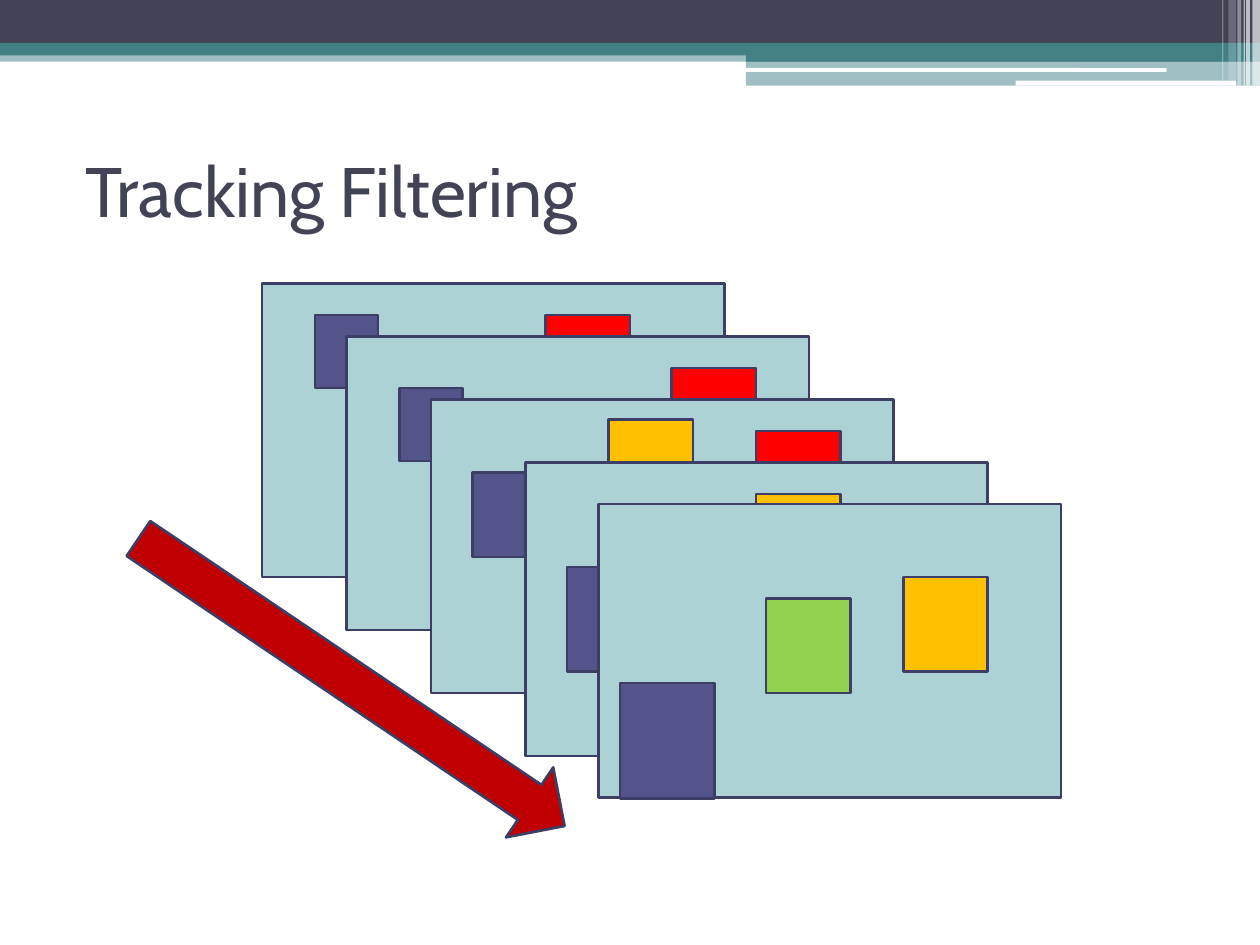
import pptx
import pptx.dml.color
import pptx.enum.shapes
import pptx.enum.text
import pptx.oxml.ns
import pptx.util
from lxml import etree

Inches = pptx.util.Inches
RGBColor = pptx.dml.color.RGBColor
SHAPE = pptx.enum.shapes.MSO_SHAPE

WHITE = RGBColor(0xFF, 0xFF, 0xFF)
SLATE = RGBColor(0x42, 0x44, 0x56)
TEAL = RGBColor(0x43, 0x80, 0x86)
FRAME_BLUE = RGBColor(0xAD, 0xD2, 0xD6)
OUTLINE = RGBColor(0x3D, 0x3E, 0x66)
INDIGO = RGBColor(0x53, 0x54, 0x8A)
RED = RGBColor(0xFF, 0x00, 0x00)
AMBER = RGBColor(0xFF, 0xC0, 0x00)
GREEN = RGBColor(0x92, 0xD0, 0x50)
DARK_RED = RGBColor(0xC0, 0x00, 0x00)

FRAME_SIZE = (3.67, 2.33)
TARGET_SIZE = (0.67, 0.75)

# Each video frame: its corner, then its targets as (x, y, width, height, color) inside it
FRAMES = [
    ((2.08, 2.25), [(0.42, 0.25, 0.5, 0.58, INDIGO), (2.25, 0.25, *TARGET_SIZE, RED)]),
    ((2.75, 2.67), [(0.42, 0.41, 0.5, 0.58, INDIGO), (2.58, 0.25, *TARGET_SIZE, RED)]),
    ((3.42, 3.17), [(0.33, 0.58, 0.67, 0.67, INDIGO), (2.58, 0.25, *TARGET_SIZE, RED),
                    (1.41, 0.16, *TARGET_SIZE, AMBER)]),
    ((4.17, 3.67), [(0.33, 0.83, 0.83, 0.83, INDIGO), (1.83, 0.25, *TARGET_SIZE, AMBER)]),
    ((4.75, 4), [(0.17, 1.42, 0.75, 0.92, INDIGO), (2.42, 0.58, *TARGET_SIZE, AMBER),
                 (1.33, 0.75, *TARGET_SIZE, GREEN)]),
]


def add_block(slide, box, color, kind=SHAPE.RECTANGLE, opacity=100, outline=None):
    shape = slide.shapes.add_shape(kind, *(Inches(length) for length in box))
    shape.shadow.inherit = False
    shape.fill.solid()
    shape.fill.fore_color.rgb = color
    if opacity < 100:
        color_element = shape.fill._xPr.find(".//" + pptx.oxml.ns.qn("a:srgbClr"))
        alpha = etree.SubElement(color_element, pptx.oxml.ns.qn("a:alpha"))
        alpha.set("val", str(opacity * 1000))
    if outline is None:
        shape.line.fill.background()
    else:
        shape.line.color.rgb = outline
        shape.line.width = pptx.util.Pt(1.5)
    return shape


def write_text(shape, text, *, size, color, font):
    frame = shape.text_frame
    frame.word_wrap = True
    frame.auto_size = pptx.enum.text.MSO_AUTO_SIZE.NONE
    frame.vertical_anchor = pptx.enum.text.MSO_ANCHOR.MIDDLE
    paragraph = frame.paragraphs[0]
    paragraph.alignment = pptx.enum.text.PP_ALIGN.LEFT
    run = paragraph.add_run()
    run.text = text
    run.font.size = pptx.util.Pt(size)
    run.font.color.rgb = color
    run.font.name = font


def add_banner(slide, left, top, width):
    right = left + width
    # Full-width bands, then the deeper step on the right
    step_left, step_width = left + 5.92, width - 5.92
    for x, y, band_width, height, color, opacity in [
        (left, 0.4, width, 0.09, TEAL, 50),
        (left, 0, width, 0.34, SLATE, 100),
        (left, 0.34, width, 0.1, TEAL, 100),
        (step_left, 0.39, step_width, 0.1, TEAL, 100),
        (step_left, 0.48, step_width, 0.2, TEAL, 50),
    ]:
        add_block(slide, (x, top + y, band_width, height), color, opacity=opacity)
    # White rules
    for x, y, rule_width, height in [(5.91, 0.54, 3.35, 0.03), (8.06, 0.64, 1.75, 0.04)]:
        add_block(slide, (left + x, top + y, rule_width, height), WHITE,
                  kind=SHAPE.ROUNDED_RECTANGLE)
    # Translucent stripes, measured from the right edge
    for inset, stripe_width, height, opacity in [
        (0.06, 0.06, 0.68, 65), (0.11, 0.03, 0.68, 65), (0.13, 0.01, 0.68, 60),
        (0.18, 0.03, 0.68, 40), (0.25, 0.06, 0.64, 20), (0.3, 0.01, 0.64, 30),
    ]:
        add_block(slide, (right - inset, top, stripe_width, height), WHITE, opacity=opacity)


def place_title(slide, left, top, width, height):
    title = slide.shapes.title
    title.left, title.top = Inches(left), Inches(top)
    title.width, title.height = Inches(width), Inches(height)
    write_text(title, "Tracking Filtering", size=40, color=SLATE, font="Cabin")


def add_video_frame(slide, left, top, width, height, targets):
    add_block(slide, (left, top, width, height), FRAME_BLUE, outline=OUTLINE)
    for x, y, target_width, target_height, color in targets:
        add_block(slide, (left + x, top + y, target_width, target_height), color,
                  outline=OUTLINE)


def add_time_arrow(slide, left, top, width, height):
    arrow = add_block(slide, (left, top, width, height), DARK_RED,
                      kind=SHAPE.RIGHT_ARROW, outline=OUTLINE)
    arrow.rotation = 34


def main():
    presentation = pptx.Presentation()
    presentation.slide_width, presentation.slide_height = Inches(10), Inches(7.5)
    slide = presentation.slides.add_slide(presentation.slide_layouts.get_by_name("Title Only"))
    add_banner(slide, 0, 0, 10)
    place_title(slide, 0.58, 0.92, 9, 1.17)
    for corner, targets in FRAMES:
        add_video_frame(slide, *corner, *FRAME_SIZE, targets)
    add_time_arrow(slide, 0.75, 5.08, 4.08, 0.67)
    presentation.save("out.pptx")


if __name__ == "__main__":
    main()
